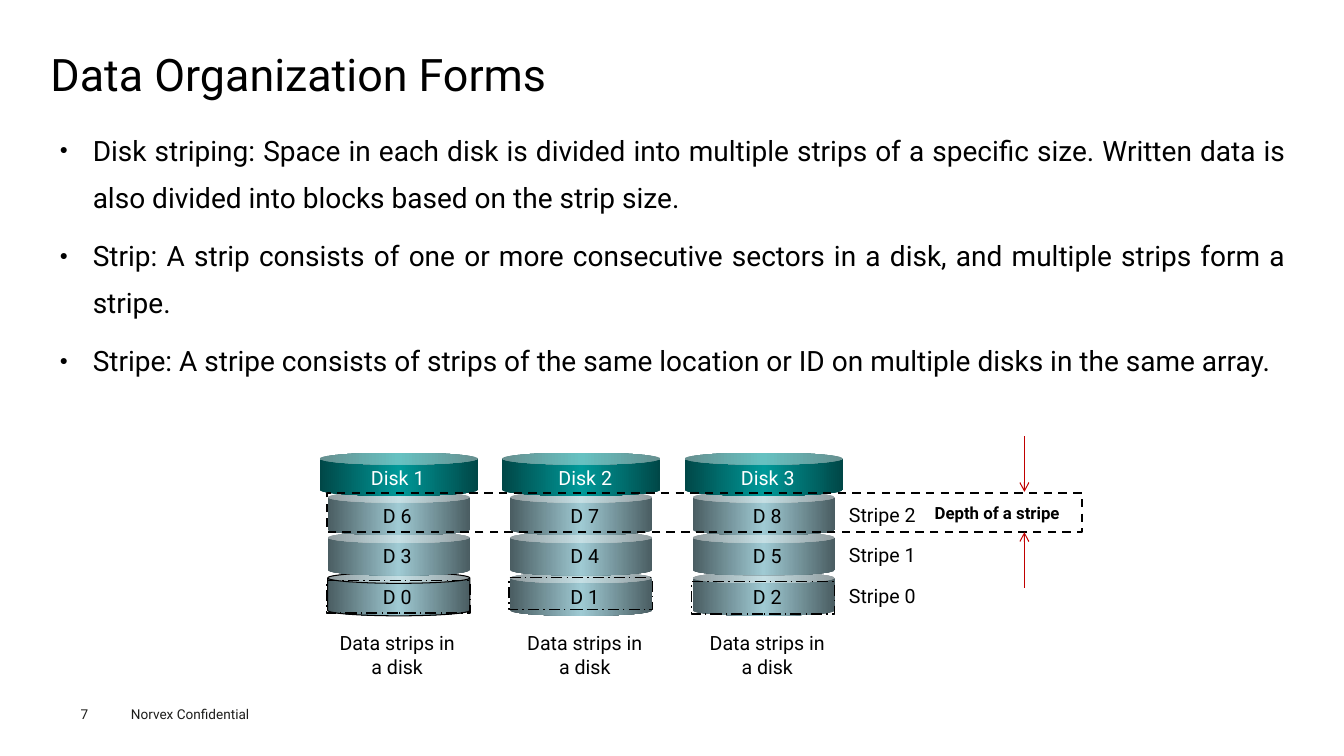
import dataclasses
import copy

import pptx
import pptx.dml.color
import pptx.enum.dml
import pptx.enum.shapes
import pptx.enum.text
import pptx.oxml.ns
import pptx.util
import lxml.etree

PX = 9144  # EMU per px, 100 px to the inch
ALIGN = pptx.enum.text.PP_ALIGN
ANCHOR = pptx.enum.text.MSO_ANCHOR
SHAPE = pptx.enum.shapes.MSO_SHAPE
DASH = pptx.enum.dml.MSO_LINE


@dataclasses.dataclass(frozen=True)
class Theme:
    font: str = "Roboto"
    ink: str = "000000"
    footer_ink: str = "1D1D1B"
    lid_ink: str = "FFFFFF"
    arrow: str = "C00000"
    strip: tuple = ("4A5D62", "9FCAD3", "4A5D62")
    lid: tuple = ("004747", "009999", "004747")
    title_size: float = 32
    body_size: float = 20
    label_size: float = 14
    depth_size: float = 12
    footer_size: float = 9.7


THEME = Theme()

BULLETS = [
    "Disk striping: Space in each disk is divided into multiple strips of a specific size. "
    "Written data is also divided into blocks based on the strip size.",
    "Strip: A strip consists of one or more consecutive sectors in a disk, "
    "and multiple strips form a stripe.",
    "Stripe: A stripe consists of strips of the same location or ID "
    "on multiple disks in the same array.",
]

# Disk stacks: centre of the labels, top of the outline round the lowest strip
DISKS = [(394, 576), (580, 573), (761, 577)]
DISK_LEFT, DISK_PITCH = 317, 181
STRIP_TOP, STRIP_PITCH = 488, 40
STRIPE_COUNT = 3


def emu(*lengths):
    return [pptx.util.Emu(length * PX) for length in lengths]


def rgb(code):
    return pptx.dml.color.RGBColor.from_string(code)


def sub(parent, tag, **attributes):
    return lxml.etree.SubElement(parent, pptx.oxml.ns.qn(tag), attributes)


def write(frame, *texts, size=THEME.label_size, color=THEME.ink, bold=False,
          align=ALIGN.LEFT, inset=(10, 5), wrap=True, anchor=ANCHOR.TOP,
          line_spacing=None, space_before=0, bullet=None):
    """Fill a text frame with one paragraph per text."""
    frame.auto_size = pptx.enum.text.MSO_AUTO_SIZE.NONE
    frame.word_wrap = wrap
    frame.vertical_anchor = anchor
    frame.margin_left = frame.margin_right = emu(inset[0])[0]
    frame.margin_top = frame.margin_bottom = emu(inset[1])[0]
    for index, text in enumerate(texts):
        paragraph = frame.add_paragraph() if index else frame.paragraphs[0]
        if bullet:
            properties = paragraph._p.get_or_add_pPr()
            indent = emu(33)[0]
            properties.set("marL", str(indent))
            properties.set("indent", str(-indent))
            sub(properties, "a:buSzPct", val="50000")
            sub(properties, "a:buChar", char=bullet)
        paragraph.alignment = align
        paragraph.line_spacing = line_spacing
        paragraph.space_before = pptx.util.Pt(space_before if index else 0)
        run = paragraph.add_run()
        run.text = text
        run.font.name = THEME.font
        run.font.size = pptx.util.Pt(size)
        run.font.bold = bold
        run.font.color.rgb = rgb(color)


def add_label(shapes, box, text, **text_format):
    write(shapes.add_textbox(*emu(*box)).text_frame, text, **text_format)


def fill_placeholder(placeholder, box, *texts, **text_format):
    placeholder.left, placeholder.top, placeholder.width, placeholder.height = emu(*box)
    write(placeholder.text_frame, *texts, **text_format)


def add_can(shapes, box, colors, curve=0.25, outlined=False):
    can = shapes.add_shape(SHAPE.CAN, *emu(*box))
    can.adjustments[0] = curve
    can.shadow.inherit = False
    can.fill.gradient()
    can.fill.gradient_angle = 0
    stop_list = can._element.spPr.find(".//" + pptx.oxml.ns.qn("a:gsLst"))
    stop_list.insert(1, copy.deepcopy(stop_list[0]))
    for stop, position, color in zip(can.fill.gradient_stops, (0, 0.5, 1), colors):
        stop.position = position
        stop.color.rgb = rgb(color)
    if outlined:
        can.line.color.rgb = rgb(THEME.ink)
        can.line.width = pptx.util.Pt(0.75)
    else:
        can.line.fill.background()


def add_outline(shapes, box, dash, width):
    outline = shapes.add_shape(SHAPE.RECTANGLE, *emu(*box))
    outline.shadow.inherit = False
    outline.fill.background()
    outline.line.color.rgb = rgb(THEME.ink)
    outline.line.width = pptx.util.Pt(width)
    outline.line.dash_style = dash


def add_arrow(shapes, x, start, end):
    arrow = shapes.add_connector(pptx.enum.shapes.MSO_CONNECTOR.STRAIGHT,
                                 *emu(x, start, x, end))
    arrow.line.color.rgb = rgb(THEME.arrow)
    arrow.line.width = pptx.util.Pt(0.75)
    sub(arrow.line._get_or_add_ln(), "a:tailEnd", type="arrow")
    sub(arrow._element.spPr, "a:effectLst")


def add_disk(shapes, disk, center):
    left = DISK_LEFT + disk * DISK_PITCH
    # Strips overlap upwards, so the lowest comes first
    for stripe in range(STRIPE_COUNT):
        top = STRIP_TOP + (STRIPE_COUNT - 1 - stripe) * STRIP_PITCH
        add_can(shapes, (left + 8, top, 141, 43), THEME.strip,
                outlined=disk == 0 and stripe == 0)
    for stripe in range(STRIPE_COUNT):
        top = STRIP_TOP + (STRIPE_COUNT - 1 - stripe) * STRIP_PITCH
        add_label(shapes, (center - 26, top + 7, 52, 34),
                  f"D {stripe * len(DISKS) + disk}", align=ALIGN.CENTER, wrap=False)
    add_can(shapes, (left, 449, 157, 43), THEME.lid, curve=0.279)
    add_label(shapes, (center - 37, 457, 75, 34), f"Disk {disk + 1}",
              color=THEME.lid_ink, align=ALIGN.CENTER, wrap=False)


def add_striping_diagram(shapes):
    for disk, (center, _) in enumerate(DISKS):
        add_disk(shapes, disk, center)

    # Outlines of the lowest strips and captions under the disks
    for disk, (center, outline_top) in enumerate(DISKS):
        add_outline(shapes, (DISK_LEFT + 7 + disk * DISK_PITCH, outline_top, 142, 32),
                    DASH.LONG_DASH_DOT, 1)
        add_label(shapes, (center - 71, 622, 142, 56), "Data strips in a disk",
                  align=ALIGN.CENTER, inset=(9, 4))

    # Stripe names and the depth of the top stripe
    add_outline(shapes, (324, 489, 749, 39), DASH.DASH, 1.5)
    for stripe in range(STRIPE_COUNT):
        top = STRIP_TOP + 7 + (STRIPE_COUNT - 1 - stripe) * STRIP_PITCH
        add_label(shapes, (833, top, 86, 32), f"Stripe {stripe}", inset=(9, 4), wrap=False)
    add_label(shapes, (918, 495, 155, 29), "Depth of a stripe",
              size=THEME.depth_size, bold=True, inset=(9, 4))
    add_arrow(shapes, 1016, 433, 488)
    add_arrow(shapes, 1016, 583, 528)


def main():
    presentation = pptx.Presentation()
    presentation.slide_width, presentation.slide_height = emu(1333, 750)
    slide = presentation.slides.add_slide(presentation.slide_layouts[1])

    # Title and definitions
    fill_placeholder(slide.shapes.title, (50, 49, 1235, 54), "Data Organization Forms",
                     size=THEME.title_size, inset=(0, 0), anchor=ANCHOR.MIDDLE,
                     line_spacing=0.9)
    fill_placeholder(slide.placeholders[1], (50, 115, 1235, 533), *BULLETS,
                     size=THEME.body_size, align=ALIGN.JUSTIFY, inset=(9, 4),
                     line_spacing=1.4, space_before=7.9, bullet="●")

    # Diagram
    add_striping_diagram(slide.shapes.add_group_shape().shapes)

    # Footer
    add_label(slide.shapes, (120, 695, 160, 27), "Norvex Confidential",
              size=THEME.footer_size, color=THEME.footer_ink)
    add_label(slide.shapes, (80, 700, 55, 16), "7",
              size=THEME.footer_size, color=THEME.footer_ink, inset=(0, 0))

    presentation.save("out.pptx")


if __name__ == "__main__":
    main()
